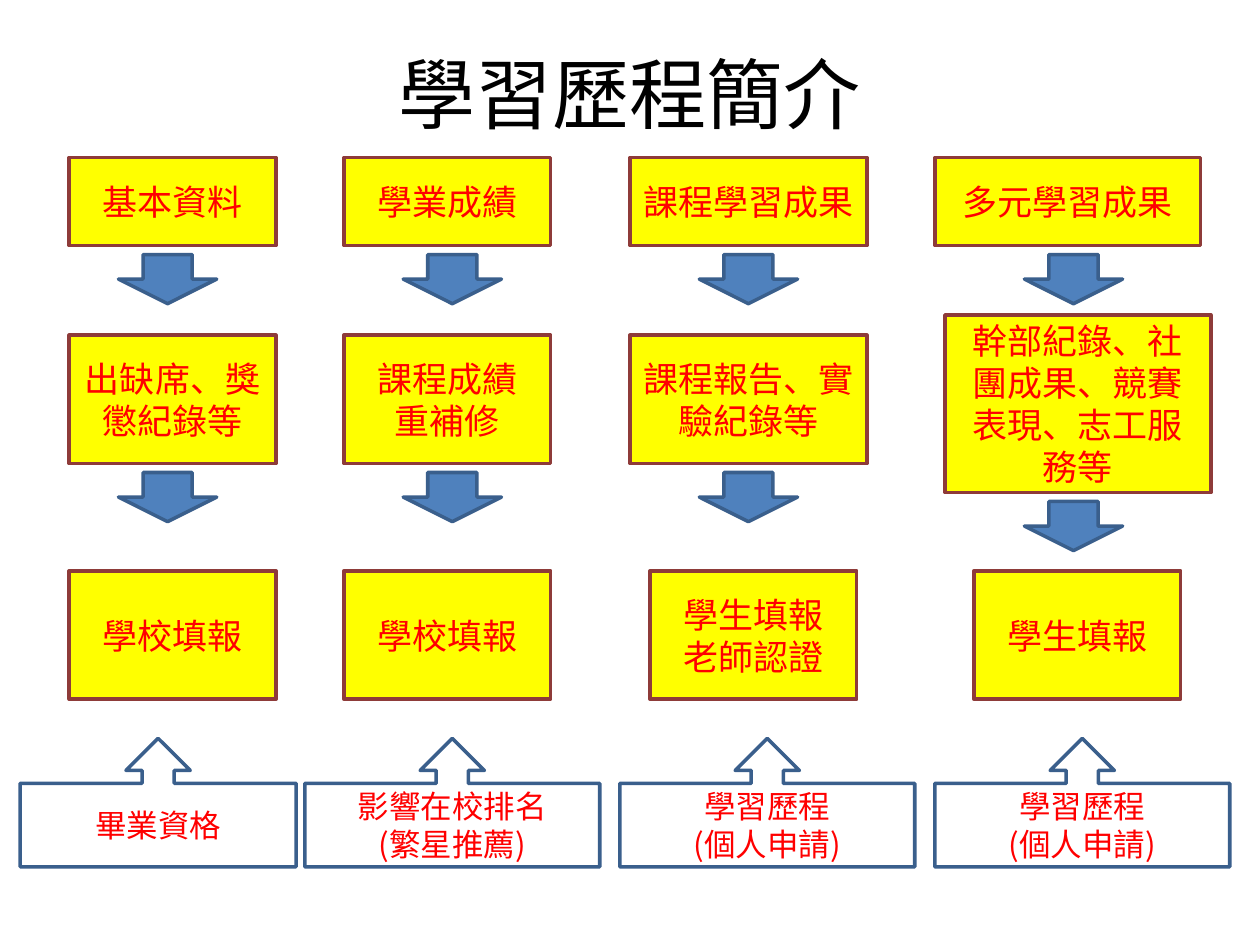
"""Build the slide that introduces the four parts of the learning portfolio."""
from lxml import etree
from pptx import Presentation
from pptx.dml.color import RGBColor
from pptx.enum.shapes import MSO_SHAPE
from pptx.enum.text import MSO_ANCHOR, PP_ALIGN
from pptx.oxml.ns import qn
from pptx.util import Inches, Pt

BOX, DOWN_ARROW, CALLOUT = (
    MSO_SHAPE.RECTANGLE, MSO_SHAPE.DOWN_ARROW, MSO_SHAPE.UP_ARROW_CALLOUT)
CENTER, MIDDLE = PP_ALIGN.CENTER, MSO_ANCHOR.MIDDLE

FONT = "Noto Sans CJK SC"
BLACK = RGBColor(0x00, 0x00, 0x00)
RED = RGBColor(0xFF, 0x00, 0x00)
YELLOW = RGBColor(0xFF, 0xFF, 0x00)
WHITE = RGBColor(0xFF, 0xFF, 0xFF)
BROWN = RGBColor(0x8E, 0x3B, 0x39)
BLUE = RGBColor(0x4F, 0x81, 0xBD)
DARK_BLUE = RGBColor(0x3A, 0x5F, 0x8C)

TITLE = "學習歷程簡介"
COLUMNS = [
    {
        "category": ("基本資料", 0.55, 1.64),
        "content": ("出缺席、獎懲紀錄等", 0.55, 1.64),
        "reporter": ("學校填報", 0.55),
        "purpose": ("畢業資格", 0.16, 2.19),
        "arrow_left": 0.94,
    },
    {
        "category": ("學業成績", 2.73, 1.64),
        "content": ("課程成績\n重補修", 2.73, 1.64),
        "reporter": ("學校填報", 2.73),
        "purpose": ("影響在校排名\n(繁星推薦)", 2.42, 2.34),
        "arrow_left": 3.2,
    },
    {
        "category": ("課程學習成果", 5, 1.88),
        "content": ("課程報告、實驗紀錄等", 5, 1.88),
        "reporter": ("學生填報\n老師認證", 5.16),
        "purpose": ("學習歷程\n(個人申請)", 4.92, 2.34),
        "arrow_left": 5.55,
    },
    {
        "category": ("多元學習成果", 7.42, 2.11),
        "content": ("幹部紀錄、社團成果、競賽表現、志工服務等", 7.5, 2.11),
        "content_span": (2.5, 1.41),
        "reporter": ("學生填報", 7.73),
        "purpose": ("學習歷程\n(個人申請)", 7.42, 2.34),
        "arrow_left": 8.13,
    },
]

CATEGORY_TOP, CATEGORY_HEIGHT = 1.25, 0.7
CONTENT_SPAN = (2.66, 1.02)
REPORTER_TOP, REPORTER_WIDTH, ROW_HEIGHT = 4.53, 1.64, 1.02
PURPOSE_TOP = 5.86
ARROW_WIDTH, ARROW_HEIGHT, ARROW_GAP = 0.78, 0.39, 0.07


def write_text(frame, text, size, color):
    frame.word_wrap = True
    frame.vertical_anchor = MIDDLE
    frame.text = text
    for paragraph in frame.paragraphs:
        paragraph.alignment = CENTER
        for run in paragraph.runs:
            run.font.size = Pt(size)
            run.font.color.rgb = color
            run.font.name = FONT
            east_asian = etree.Element(qn("a:ea"), typeface=FONT)
            run.font._element.find(qn("a:latin")).addnext(east_asian)


def add_block(slide, kind, bounds, fill, line, text="", size=20):
    block = slide.shapes.add_shape(kind, *map(Inches, bounds))
    block.shadow.inherit = False
    block.fill.solid()
    block.fill.fore_color.rgb = fill
    block.line.color.rgb = line
    block.line.width = Pt(2)
    if text:
        write_text(block.text_frame, text, size=size, color=RED)


def add_column(slide, column):
    text, left, width = column["category"]
    add_block(slide, BOX, (left, CATEGORY_TOP, width, CATEGORY_HEIGHT),
              YELLOW, BROWN, text)

    text, left, width = column["content"]
    content_top, content_height = column.get("content_span", CONTENT_SPAN)
    add_block(slide, BOX, (left, content_top, width, content_height),
              YELLOW, BROWN, text)

    text, left = column["reporter"]
    add_block(slide, BOX, (left, REPORTER_TOP, REPORTER_WIDTH, ROW_HEIGHT),
              YELLOW, BROWN, text)

    text, left, width = column["purpose"]
    add_block(slide, CALLOUT, (left, PURPOSE_TOP, width, ROW_HEIGHT),
              WHITE, DARK_BLUE, text, size=18)

    for bottom in (CATEGORY_TOP + CATEGORY_HEIGHT, content_top + content_height):
        bounds = (column["arrow_left"], bottom + ARROW_GAP, ARROW_WIDTH, ARROW_HEIGHT)
        add_block(slide, DOWN_ARROW, bounds, BLUE, DARK_BLUE)


def main():
    deck = Presentation()
    deck.slide_width, deck.slide_height = Inches(10), Inches(7.5)
    slide = deck.slides.add_slide(deck.slide_layouts.get_by_name("Title Only"))
    title = slide.shapes.title
    title.left, title.top = Inches(0.5), Inches(0.3)
    title.width, title.height = Inches(9), Inches(0.87)
    write_text(title.text_frame, TITLE, size=44, color=BLACK)
    for column in COLUMNS:
        add_column(slide, column)
    deck.save("out.pptx")


if __name__ == "__main__":
    main()
